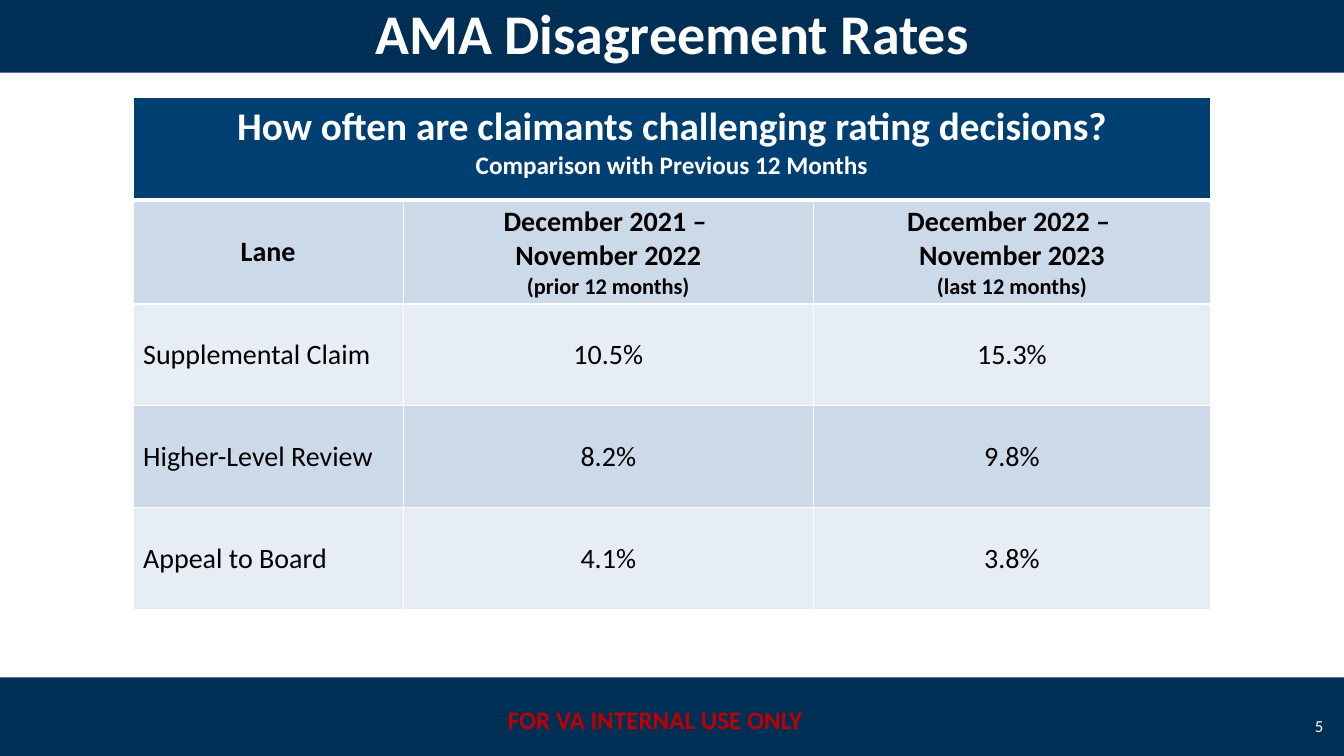
from lxml import etree
from pptx import Presentation, util as u
from pptx.dml.color import RGBColor
from pptx.enum import shapes, text
from pptx.oxml import ns

NAVY = RGBColor(0x00, 0x2F, 0x56)
HEADER_BLUE = RGBColor(0x00, 0x3F, 0x72)
BAND_DARK = RGBColor(0xCC, 0xD9, 0xE8)
BAND_LIGHT = RGBColor(0xE7, 0xED, 0xF4)
WHITE = RGBColor(0xFF, 0xFF, 0xFF)
BLACK = RGBColor(0x00, 0x00, 0x00)
RED = RGBColor(0xC0, 0x00, 0x00)

GRID_COLUMNS, GRID_ROWS = 160, 90
UNIT = u.Inches(7.5) / GRID_ROWS
LEFT, CENTER, RIGHT = text.PP_ALIGN.LEFT, text.PP_ALIGN.CENTER, text.PP_ALIGN.RIGHT

QUESTION = "How often are claimants challenging rating decisions?"
PERIODS = [
    ("December 2021 – ", "November 2022", "(prior 12 months)"),
    ("December 2022 – ", "November 2023", "(last 12 months)"),
]
LANES = [
    ("Supplemental Claim", "10.5%", "15.3%"),
    ("Higher-Level Review", "8.2%", "9.8%"),
    ("Appeal to Board", "4.1%", "3.8%"),
]
LANE_WIDTHS = (32.16, 48.84, 47.28)
LANE_HEIGHT = 12.14


def grid(*lengths):
    return [u.Emu(round(length * UNIT)) for length in lengths]


def write(frame, lines, sizes, color=BLACK, bold=False, align=CENTER):
    frame.word_wrap = True
    for index, (line, size) in enumerate(zip(lines, sizes)):
        paragraph = frame.paragraphs[0] if index == 0 else frame.add_paragraph()
        paragraph.alignment = align
        run = paragraph.add_run()
        run.text = line
        run.font.name = "Calibri"
        run.font.size = u.Pt(size)
        run.font.bold = bold
        run.font.color.rgb = color


def add_bar(slide, *box):
    bar = slide.shapes.add_shape(shapes.MSO_SHAPE.RECTANGLE, *grid(*box))
    bar.shadow.inherit = False
    bar.fill.solid()
    bar.fill.fore_color.rgb = NAVY
    bar.line.fill.background()
    bar.text_frame.vertical_anchor = text.MSO_ANCHOR.MIDDLE
    return bar.text_frame


def add_label(slide, line, size, box, **style):
    frame = slide.shapes.add_textbox(*grid(*box)).text_frame
    frame.vertical_anchor = text.MSO_ANCHOR.MIDDLE
    write(frame, [line], [size], **style)


def add_borders(cell, **widths):
    properties = cell._tc.get_or_add_tcPr()
    for side in "LRTB":
        border = etree.SubElement(properties, ns.qn(f"a:ln{side}"),
                                  w=str(u.Pt(widths.get(side, 1))))
        fill = etree.SubElement(border, ns.qn("a:solidFill"))
        etree.SubElement(fill, ns.qn("a:srgbClr"), val=str(WHITE))


def fill_cell(cell, lines, sizes, fill, anchor=text.MSO_ANCHOR.MIDDLE, **style):
    cell.fill.solid()
    cell.fill.fore_color.rgb = fill
    cell.vertical_anchor = anchor
    write(cell.text_frame, lines, sizes, **style)


def add_rates_table(slide):
    row_count = len(LANES) + 2
    box = grid(15.84, 11.64, sum(LANE_WIDTHS), row_count * LANE_HEIGHT)
    rates = slide.shapes.add_table(row_count, len(LANE_WIDTHS), *box).table
    for column, width in zip(rates.columns, grid(*LANE_WIDTHS)):
        column.width = width
    for index, row in enumerate(rates.rows):
        row.height = grid(LANE_HEIGHT)[0]
        for cell in row.cells:
            add_borders(cell, B=3 if index == 0 else 1, T=3 if index == 1 else 1)

    heading = rates.cell(0, 0)
    heading.merge(rates.cell(0, len(LANE_WIDTHS) - 1))
    fill_cell(heading, (QUESTION, "Comparison with Previous 12 Months"), (28, 18),
              HEADER_BLUE, text.MSO_ANCHOR.TOP, color=WHITE, bold=True)

    for column, lines in enumerate([("Lane",), *PERIODS]):
        fill_cell(rates.cell(1, column), lines, (20, 20, 16), BAND_DARK, bold=True)

    for row, lane in enumerate(LANES, start=2):
        band = BAND_DARK if row % 2 else BAND_LIGHT
        for column, value in enumerate(lane):
            fill_cell(rates.cell(row, column), [value], [20], band,
                      align=CENTER if column else LEFT)


def main():
    deck = Presentation()
    deck.slide_width, deck.slide_height = grid(GRID_COLUMNS, GRID_ROWS)
    slide = deck.slides.add_slide(deck.slide_layouts[6])

    add_bar(slide, 0, 80.64, GRID_COLUMNS, 9.6)
    title = add_bar(slide, 0, -0.96, GRID_COLUMNS, 9.6)
    write(title, ["AMA Disagreement Rates"], [40], color=WHITE, bold=True)
    add_label(slide, "FOR VA INTERNAL USE ONLY", 18, (52, 83.2, 52, 4.8),
              color=RED, bold=True)
    add_label(slide, "5", 12, (152, 84, 6.72, 4.8), color=WHITE, align=RIGHT)
    add_rates_table(slide)

    deck.save("out.pptx")


if __name__ == "__main__":
    main()
